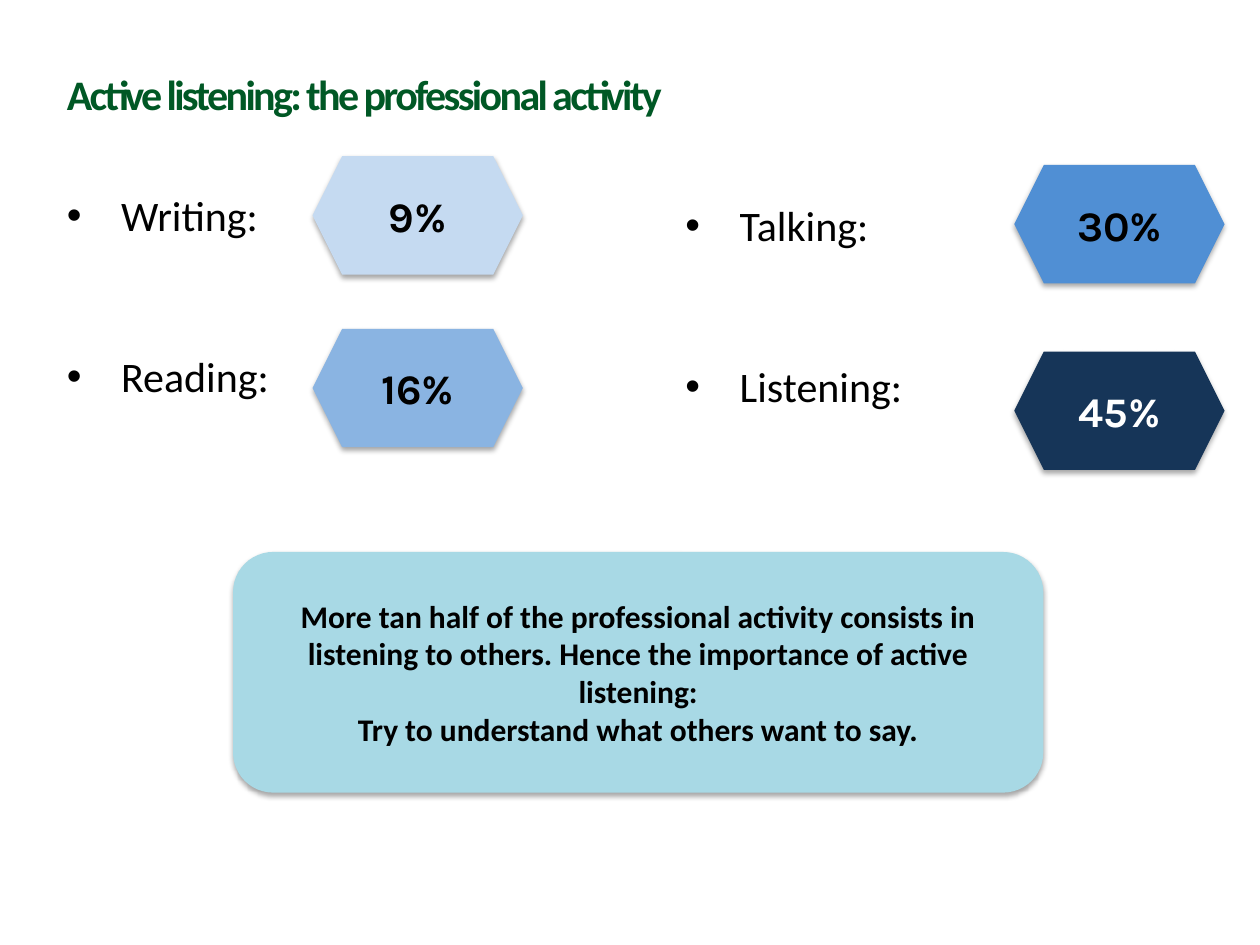
from lxml import etree
from pptx import Presentation
from pptx.dml.color import RGBColor
from pptx.enum import shapes, text
from pptx.oxml import ns
from pptx.util import Pt

GREEN = RGBColor(0x00, 0x58, 0x25)
BLACK = RGBColor(0x00, 0x00, 0x00)
WHITE = RGBColor(0xFF, 0xFF, 0xFF)
PALE_BLUE = RGBColor(0xC5, 0xDA, 0xF1)
LIGHT_BLUE = RGBColor(0x8A, 0xB4, 0xE2)
MID_BLUE = RGBColor(0x50, 0x8F, 0xD4)
NAVY = RGBColor(0x16, 0x35, 0x58)
AQUA = RGBColor(0xA8, 0xD9, 0xE5)


def style_font(paragraph, name, size, color, bold):
    font = paragraph.font
    font.name, font.size, font.bold = name, Pt(size), bold
    font.color.rgb = color


def add_panel(kind, left, top, width, height, fill, lines, font_name, size, color):
    """Add a filled shape with a soft shadow and bold centred text."""
    panel = slide.shapes.add_shape(kind, Pt(left), Pt(top), Pt(width), Pt(height))
    panel.fill.solid()
    panel.fill.fore_color.rgb = fill
    panel.line.fill.background()
    panel.shadow.inherit = False
    effects = panel._element.spPr.find(ns.qn("a:effectLst"))
    shadow = etree.SubElement(effects, ns.qn("a:outerShdw"), blurRad=str(Pt(3.1)),
                              dist=str(Pt(1.8)), dir="5400000", rotWithShape="0")
    shade = etree.SubElement(shadow, ns.qn("a:srgbClr"), val="000000")
    etree.SubElement(shade, ns.qn("a:alpha"), val="35000")
    frame = panel.text_frame
    frame.word_wrap = True
    frame.vertical_anchor = text.MSO_ANCHOR.MIDDLE
    frame.text = "\n".join(lines)
    for paragraph in frame.paragraphs:
        paragraph.alignment = text.PP_ALIGN.CENTER
        style_font(paragraph, font_name, size, color, True)


deck = Presentation()
deck.slide_width, deck.slide_height = Pt(720), Pt(540)
slide = deck.slides.add_slide(deck.slide_layouts[5])

# Title
title = slide.shapes.title
title.left, title.top, title.width, title.height = Pt(38.2), Pt(42.5), Pt(660), Pt(26)
heading = title.text_frame
heading.margin_left = heading.margin_top = heading.margin_right = heading.margin_bottom = 0
heading.auto_size = text.MSO_AUTO_SIZE.NONE
heading.vertical_anchor = text.MSO_ANCHOR.TOP
heading.text = "Active listening: the professional activity"
heading_line = heading.paragraphs[0]
heading_line.alignment = text.PP_ALIGN.LEFT
heading_line.line_spacing = 0.9
style_font(heading_line, "Calibri", 24, GREEN, True)
heading_line.runs[0].font._element.set("spc", "-150")

# Two columns of bulleted activities
for left, top, activities in [(38.2, 111.6, ["Writing:", "Reading:"]),
                              (391.7, 117.3, ["Talking:", "Listening:"])]:
    column = slide.shapes.add_textbox(Pt(left), Pt(top), Pt(300), Pt(120)).text_frame
    column.margin_left = column.margin_top = column.margin_right = column.margin_bottom = 0
    column.word_wrap = True
    column.text = "\n".join(activities)
    for index, activity in enumerate(column.paragraphs):
        properties = activity._p.get_or_add_pPr()
        properties.set("marL", str(Pt(31)))
        properties.set("indent", str(-Pt(31)))
        etree.SubElement(properties, ns.qn("a:buFont"), typeface="Arial")
        etree.SubElement(properties, ns.qn("a:buChar"), char="•")
        activity.alignment = text.PP_ALIGN.JUSTIFY
        activity.line_spacing = 0.9
        if index:
            activity.space_before = Pt(66)
        style_font(activity, "Calibri", 24, BLACK, False)

# Share of each activity
for left, top, share, fill, color in [(178.6, 89.3, "9%", PALE_BLUE, BLACK),
                                      (178.6, 187.9, "16%", LIGHT_BLUE, BLACK),
                                      (579.6, 94.3, "30%", MID_BLUE, BLACK),
                                      (579.6, 200.9, "45%", NAVY, WHITE)]:
    add_panel(shapes.MSO_SHAPE.HEXAGON, left, top, 120.2, 67.7, fill,
              [share], "Karla", 24, color)

# Conclusion
add_panel(shapes.MSO_SHAPE.ROUNDED_RECTANGLE, 133.2, 315.4, 463, 137.5, AQUA,
          ["More tan half of the professional activity consists in listening to others. "
           "Hence the importance of active listening:",
           "Try to understand what others want to say."],
          "Calibri", 18, BLACK)

deck.save("out.pptx")
